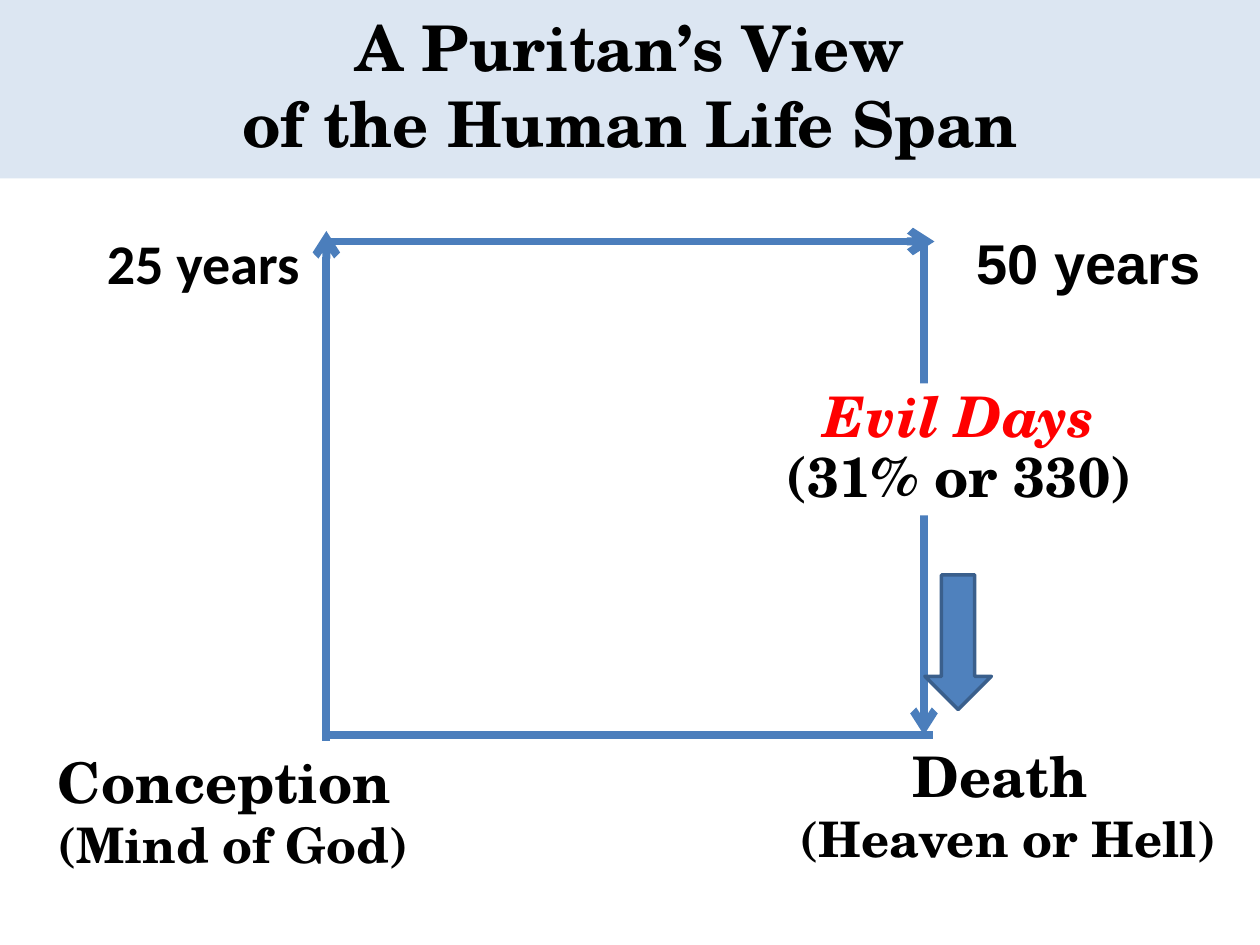
from lxml.etree import SubElement
from pptx import Presentation
from pptx.dml.color import RGBColor
from pptx.enum.shapes import MSO_CONNECTOR, MSO_SHAPE
from pptx.enum.text import MSO_ANCHOR, PP_ALIGN
from pptx.oxml.ns import qn
from pptx.util import Pt

SERIF = "TeX Gyre Schola"
BLACK = "000000"
WHITE = "FFFFFF"


def color(value):
    """Turn a hex string into a colour."""
    return RGBColor.from_string(value)


def add_block(page, shape_type, left, top, width, height, fill, outline=None):
    """Add a filled preset shape, outlined only when a colour is given."""
    block = page.shapes.add_shape(shape_type, Pt(left), Pt(top), Pt(width), Pt(height))
    block.shadow.inherit = False
    block.fill.solid()
    block.fill.fore_color.rgb = color(fill)
    if outline:
        block.line.color.rgb = color(outline)
        block.line.width = Pt(2)
    else:
        block.line.fill.background()
    return block


def add_label(page, left, top, width, height, lines, font=SERIF,
              align=PP_ALIGN.CENTER, spacing=None):
    """Add a bold text box from (text, size, colour, italic) lines."""
    box = page.shapes.add_textbox(Pt(left), Pt(top), Pt(width), Pt(height))
    frame = box.text_frame
    frame.word_wrap = True
    frame.vertical_anchor = MSO_ANCHOR.TOP
    frame.text = "\n".join(line[0] for line in lines)
    for paragraph, (_, size, ink, italic) in zip(frame.paragraphs, lines):
        paragraph.alignment = align
        if spacing:
            paragraph.line_spacing = Pt(spacing)
        for span in paragraph.runs:
            span.font.name = font
            span.font.size = Pt(size)
            span.font.bold = True
            span.font.italic = italic
            span.font.color.rgb = color(ink)
    return box


def add_side(page, start, end, arrow=True):
    """Add one side of the life-span square."""
    side = page.shapes.add_connector(
        MSO_CONNECTOR.STRAIGHT, *(Pt(value) for value in start + end))
    side.line.color.rgb = color("4B7EBC")
    side.line.width = Pt(4.5)
    if arrow:
        SubElement(side.line._get_or_add_ln(), qn("a:tailEnd"), type="arrow")
    SubElement(side._element.spPr, qn("a:effectLst"))


def main():
    """Build the life-span slide."""
    deck = Presentation()
    deck.slide_width, deck.slide_height = Pt(720), Pt(540)
    page = deck.slides.add_slide(deck.slide_layouts[6])

    add_label(page, 444, 420, 264, 80, [
        ("Death ", 32, BLACK, False), ("(Heaven or Hell)", 28, BLACK, False)])

    left, right, top, bottom = 186.5, 528, 138, 420
    add_side(page, (left, 462), (left, 132))
    add_side(page, (left, top), (534, top))
    add_side(page, (right, top), (right, bottom))
    add_side(page, (533, bottom), (184.5, bottom), arrow=False)

    add_block(page, MSO_SHAPE.RECTANGLE, 24, 423.5, 218, 80, WHITE)
    add_label(page, 24, 423.5, 218, 80, [
        ("Conception ", 32, BLACK, False), ("(Mind of God)", 28, BLACK, False)])

    for x, text, font in ((54, "25 years", "Calibri"), (542, " 50 years", "Arial")):
        add_label(page, x, 127, 162, 46, [(text, 32, BLACK, False)], font, PP_ALIGN.LEFT)

    add_block(page, MSO_SHAPE.DOWN_ARROW, 528.5, 328.5, 38, 77, "4F81BD", "3A5F8C")

    add_block(page, MSO_SHAPE.RECTANGLE, 430, 219, 236, 75.5, WHITE)
    add_label(page, 430, 219, 236, 75.5, [
        ("Evil Days", 32, "FF0000", True), ("(31% or 330)", 32, BLACK, False)], spacing=34)

    add_block(page, MSO_SHAPE.RECTANGLE, 0, 0, 720, 102, "DCE6F2")
    add_label(page, 0, 1.5, 720, 94.5, [
        ("A Puritan’s View", 36, BLACK, False),
        ("of the Human Life Span", 36, BLACK, False)])

    deck.save("out.pptx")


if __name__ == "__main__":
    main()
